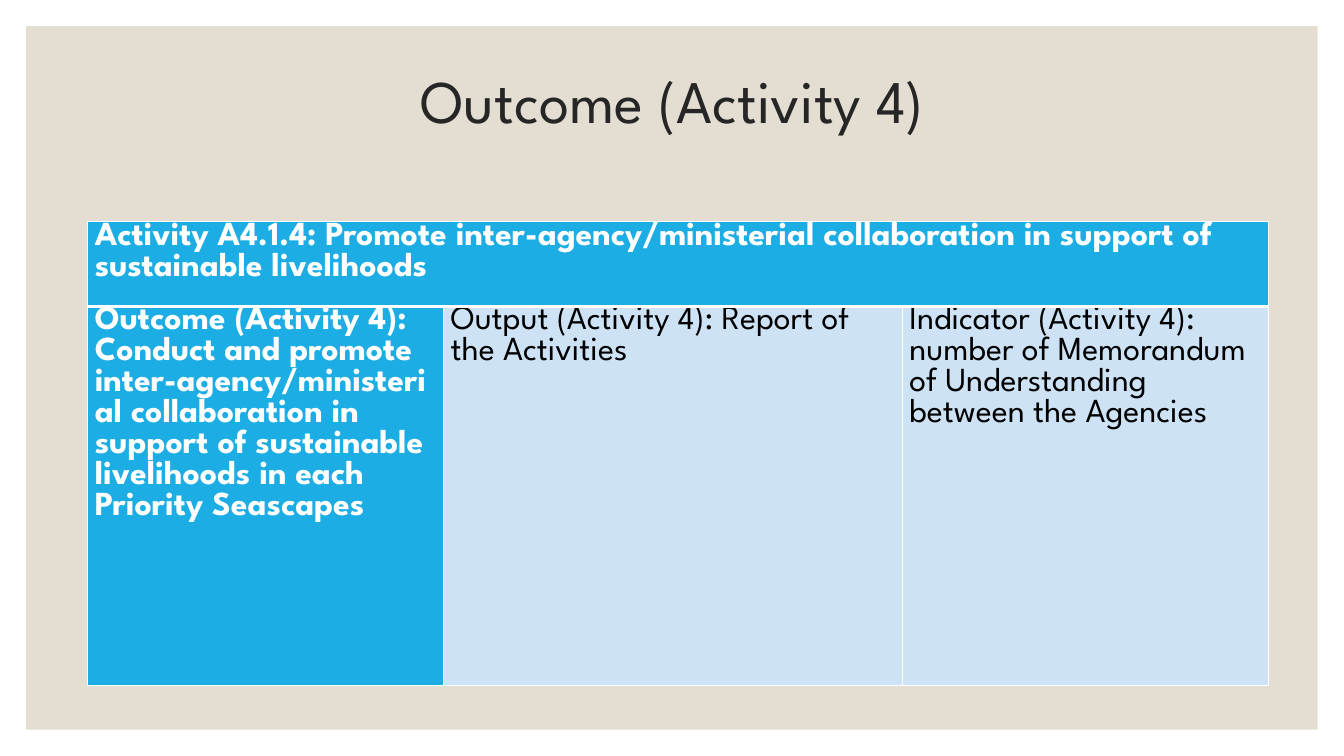
from pptx import Presentation
from pptx.dml.color import RGBColor
from pptx.enum.shapes import MSO_SHAPE as Shape
from pptx.enum.text import MSO_ANCHOR as Anchor, MSO_AUTO_SIZE as AutoSize, PP_ALIGN as Align
from pptx.oxml.ns import qn
from pptx.util import Inches, Pt
from lxml.etree import SubElement

WIDTH, HEIGHT = 13.33, 7.5
MARGIN = 0.26
FONT = "League Spartan"
COLORS = {
    "panel": "E3DED1",
    "title": "262626",
    "header": "1CADE4",
    "body": "CDE3F5",
    "white": "FFFFFF",
    "black": "000000",
}
COLUMNS = [3.53, 4.55, 3.63]
ROWS = [0.84, 3.76]
HEADING = "Activity A4.1.4: Promote inter-agency/ministerial collaboration in support of sustainable livelihoods"
DETAILS = [
    "Outcome (Activity 4): Conduct and promote inter-agency/ministerial collaboration "
    "in support of sustainable livelihoods in each Priority Seascapes",
    "Output (Activity 4): Report of the Activities",
    "Indicator (Activity 4): number of Memorandum of Understanding between the Agencies",
]


def color(name):
    return RGBColor.from_string(COLORS[name])


def add_span(para, text, size, tint, bold=False):
    span = para.add_run()
    span.text = text
    span.font.name = FONT
    span.font.size = Pt(size)
    span.font.bold = bold
    span.font.color.rgb = color(tint)


def add_panel(page):
    panel = page.shapes.add_shape(
        Shape.RECTANGLE, Inches(MARGIN), Inches(MARGIN),
        Inches(WIDTH - 2 * MARGIN), Inches(HEIGHT - 2 * MARGIN))
    panel.shadow.inherit = False
    panel.fill.solid()
    panel.fill.fore_color.rgb = color("panel")
    panel.line.fill.background()
    page.shapes._spTree.insert(2, panel._element)


def set_title(page, text):
    title = page.shapes.title
    title.left, title.top = Inches(1.17), Inches(0.7)
    title.width, title.height = Inches(11), Inches(0.67)
    frame = title.text_frame
    frame.auto_size = AutoSize.NONE
    frame.vertical_anchor = Anchor.MIDDLE
    para = frame.paragraphs[0]
    para.alignment = Align.CENTER
    para.line_spacing = 0.9
    add_span(para, text, 43.2, "title")


def set_borders(cell, bottom, top):
    props = cell._tc.get_or_add_tcPr()
    for index, (side, width) in enumerate([("L", 1), ("R", 1), ("T", top), ("B", bottom)]):
        line = props.makeelement(qn(f"a:ln{side}"), {"w": str(Pt(width))})
        fill = SubElement(line, qn("a:solidFill"))
        SubElement(fill, qn("a:srgbClr"), val=COLORS["white"])
        props.insert(index, line)


def fill_cell(cell, text, strong):
    cell.margin_left = cell.margin_right = Inches(0.07)
    cell.margin_top = cell.margin_bottom = 0
    cell.fill.solid()
    cell.fill.fore_color.rgb = color("header" if strong else "body")
    if text:
        para = cell.text_frame.paragraphs[0]
        add_span(para, text, 24, "white" if strong else "black", strong)


def add_activity_table(page):
    frame = page.shapes.add_table(
        len(ROWS), len(COLUMNS), Inches(0.87), Inches(2.2),
        Inches(sum(COLUMNS)), Inches(sum(ROWS)))
    table = frame.table
    for column, width in zip(table.columns, COLUMNS):
        column.width = Inches(width)
    for row, height in zip(table.rows, ROWS):
        row.height = Inches(height)
    table.cell(0, 0).merge(table.cell(0, len(COLUMNS) - 1))
    for index, detail in enumerate(DETAILS):
        top, lower = table.cell(0, index), table.cell(1, index)
        fill_cell(top, HEADING if index == 0 else "", True)
        fill_cell(lower, detail, index == 0)
        set_borders(top, bottom=3, top=1)
        set_borders(lower, bottom=1, top=3)


def main():
    deck = Presentation()
    deck.slide_width, deck.slide_height = Inches(WIDTH), Inches(HEIGHT)
    page = deck.slides.add_slide(deck.slide_layouts[5])
    add_panel(page)
    set_title(page, "Outcome (Activity 4)")
    add_activity_table(page)
    deck.save("out.pptx")


if __name__ == "__main__":
    main()
